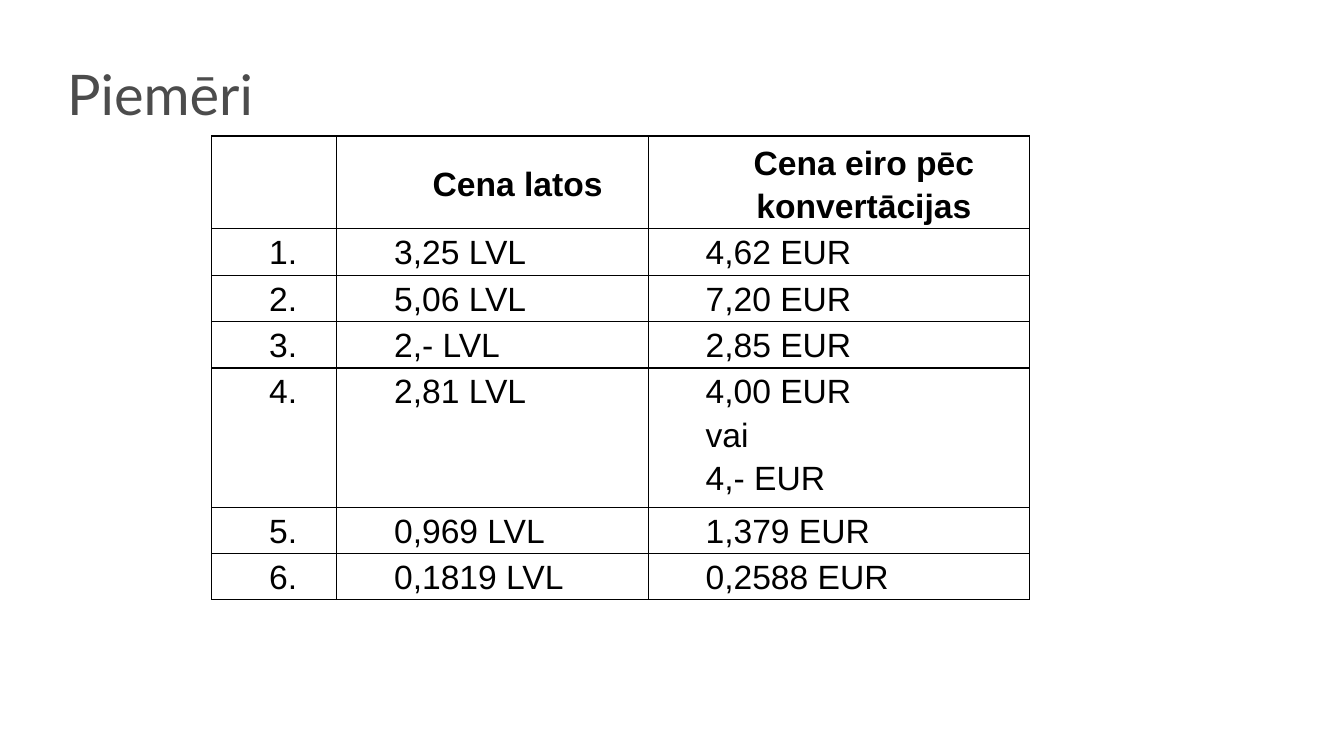
from lxml.etree import SubElement
from pptx import Presentation
from pptx.dml.color import RGBColor
from pptx.enum.text import MSO_ANCHOR as Anchor, PP_ALIGN as Align
from pptx.oxml.ns import qn
from pptx.util import Inches, Pt

BLACK = RGBColor(0x00, 0x00, 0x00)
GREY = RGBColor(0x4C, 0x4C, 0x4C)

HEADER = ["", "Cena latos", "Cena eiro pēc konvertācijas"]
PRICES = [
    ("3,25 LVL", "4,62 EUR"),
    ("5,06 LVL", "7,20 EUR"),
    ("2,- LVL", "2,85 EUR"),
    ("2,81 LVL", "4,00 EUR\nvai\n4,- EUR"),
    ("0,969 LVL", "1,379 EUR"),
    ("0,1819 LVL", "0,2588 EUR"),
]
COLUMNS = [9.3, 23.18, 28.35]
LINE = 6.13


class Deck:
    """Places elements on one slide; lengths are percentages of its size."""

    title_font, table_font = "Lato", "Arial"
    title_size, table_size = Pt(40), Pt(24)

    def __init__(self):
        self.prs = Presentation()
        self.prs.slide_width, self.prs.slide_height = Inches(13.33), Inches(7.5)
        self.s = self.prs.slides.add_slide(self.prs.slide_layouts[6])

    def x(self, share):
        return round(self.prs.slide_width * share / 100)

    def y(self, share):
        return round(self.prs.slide_height * share / 100)

    def box(self, left, top, width, height):
        return self.x(left), self.y(top), self.x(width), self.y(height)

    def run(self, p, text, font, size, color, bold=False):
        r = p.add_run()
        r.text = text
        r.font.name, r.font.size, r.font.bold = font, size, bold
        r.font.color.rgb = color

    def title(self, text, *place):
        tf = self.s.shapes.add_textbox(*self.box(*place)).text_frame
        tf.word_wrap, tf.vertical_anchor = True, Anchor.MIDDLE
        tf.margin_left = tf.margin_right = tf.margin_top = tf.margin_bottom = 0
        p = tf.paragraphs[0]
        p.line_spacing = 1.02
        self.run(p, text, self.title_font, self.title_size, GREY)

    def table(self, rows, left, top, widths, heights):
        place = self.box(left, top, sum(widths), sum(heights))
        table = self.s.shapes.add_table(len(rows), len(widths), *place).table
        table.horz_banding = False
        for column, width in zip(table.columns, widths):
            column.width = self.x(width)
        for i, (row, height) in enumerate(zip(rows, heights)):
            table.rows[i].height = self.y(height)
            for j, text in enumerate(row):
                self.cell(table.cell(i, j), text, header=i == 0)

    def cell(self, cell, text, header):
        cell.margin_left = cell.margin_right = Inches(0.07)
        cell.margin_top = cell.margin_bottom = 0
        cell.vertical_anchor = Anchor.MIDDLE if header else Anchor.TOP
        self.borders(cell)
        cell.fill.background()
        tf = cell.text_frame
        for k, line in enumerate(text.split("\n") if text else []):
            p = tf.add_paragraph() if k else tf.paragraphs[0]
            p.alignment = Align.CENTER if header else Align.JUSTIFY
            p.line_spacing = 1.15
            pPr = p._p.get_or_add_pPr()
            pPr.set("marL", str(Inches(0.5)))
            pPr.set("indent", "0")
            self.run(p, line, self.table_font, self.table_size, BLACK, header)

    def borders(self, cell):
        tcPr = cell._tc.get_or_add_tcPr()
        for side in ("a:lnL", "a:lnR", "a:lnT", "a:lnB"):
            ln = SubElement(tcPr, qn(side), w=str(Pt(1)))
            fill = SubElement(ln, qn("a:solidFill"))
            SubElement(fill, qn("a:srgbClr"), val=str(BLACK))


def main():
    deck = Deck()
    deck.title("Piemēri", 5, 8, 90, 8.53)
    rows = [HEADER] + [(f"{n}.", *pair) for n, pair in enumerate(PRICES, 1)]
    # Each row is as tall as the lines it holds; the header takes two.
    heights = [2 * LINE] + [LINE * (1 + eur.count("\n")) for _, eur in PRICES]
    deck.table(rows, 15.75, 18, COLUMNS, heights)
    deck.prs.save("out.pptx")


if __name__ == "__main__":
    main()
